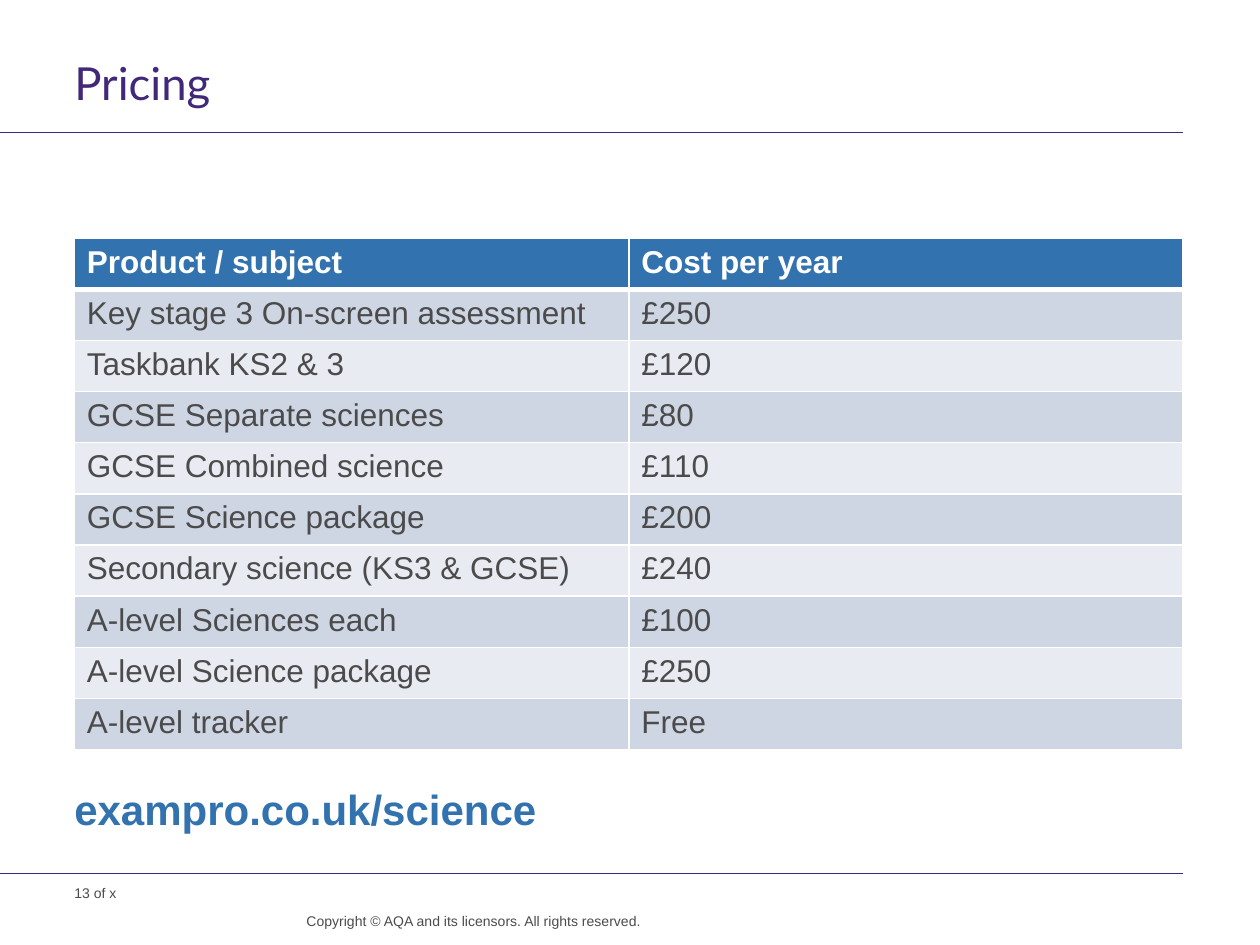
from lxml.etree import SubElement
from pptx import Presentation
from pptx.dml.color import RGBColor
from pptx.enum.shapes import MSO_CONNECTOR
from pptx.enum.text import PP_ALIGN
from pptx.oxml.ns import qn
from pptx.util import Inches, Pt

COLORS = {
    "purple": "412878", "blue": "3273AF", "grey": "4B4B4B",
    "white": "FFFFFF", "dark": "CED5E3", "light": "E8EBF2",
}
STYLES = {
    "title": {"name": "Lato", "size": Pt(26), "color": "purple"},
    "head": {"name": "Arial", "size": Pt(18), "bold": True, "color": "white"},
    "body": {"name": "Arial", "size": Pt(18), "bold": False, "color": "grey"},
    "small": {"name": "Arial", "size": Pt(8), "color": "grey"},
    "link": {"name": "Arial", "size": Pt(24), "bold": True, "color": "blue"},
}
PRICES = [
    ("Product / subject", "Cost per year"),
    ("Key stage 3 On-screen assessment", "£250"),
    ("Taskbank KS2 & 3", "£120"),
    ("GCSE Separate sciences", "£80"),
    ("GCSE Combined science", "£110"),
    ("GCSE Science package", "£200"),
    ("Secondary science (KS3 & GCSE)", "£240"),
    ("A-level Sciences each", "£100"),
    ("A-level Science package", "£250"),
    ("A-level tracker", "Free"),
]
LEFT, RIGHT = 0.59, 9.39


def rgb(name):
    return RGBColor.from_string(COLORS[name])


class Deck:
    """Holds the text styles and the slide being drawn."""

    def __init__(self, slide, styles):
        self.slide = slide
        self.styles = styles

    def label(self, para, text, style):
        """Add a styled run to a paragraph."""
        run = para.add_run()
        run.text = text
        for key, value in self.styles[style].items():
            if key == "color":
                run.font.color.rgb = rgb(value)
            else:
                setattr(run.font, key, value)

    def text(self, text, style, box, **layout):
        frame = self.slide.shapes.add_textbox(*map(Inches, box)).text_frame
        frame.word_wrap = True
        for side in ("left", "top", "right", "bottom"):
            setattr(frame, f"margin_{side}", 0)
        para = frame.paragraphs[0]
        for key, value in layout.items():
            setattr(para, key, value)
        self.label(para, text, style)

    def rule(self, top):
        """Draw a thin line from the slide's left edge to the right margin."""
        ends = map(Inches, (0, top, RIGHT, top))
        line = self.slide.shapes.add_connector(MSO_CONNECTOR.STRAIGHT, *ends)
        line.line.color.rgb = rgb("purple")
        line.line.width = Pt(0.6)
        SubElement(line._element.spPr, qn("a:effectLst"))

    def border(self, cell, widths):
        props = cell._tc.get_or_add_tcPr()
        for side, width in zip("LRTB", widths):
            edge = SubElement(props, qn(f"a:ln{side}"), w=str(Pt(width)))
            fill = SubElement(edge, qn("a:solidFill"))
            SubElement(fill, qn("a:srgbClr"), val=COLORS["white"])

    def table(self, rows, box):
        shape = self.slide.shapes.add_table(
            len(rows), len(rows[0]), *map(Inches, box))
        for i, row in enumerate(rows):
            shade = "blue" if i == 0 else ("light", "dark")[i % 2]
            widths = (1, 1, 3 if i == 1 else 1, 3 if i == 0 else 1)
            for j, text in enumerate(row):
                cell = shape.table.cell(i, j)
                self.border(cell, widths)
                cell.fill.solid()
                cell.fill.fore_color.rgb = rgb(shade)
                self.label(cell.text_frame.paragraphs[0], text,
                           "body" if i else "head")


def main():
    show = Presentation()
    show.slide_width, show.slide_height = Inches(10), Inches(7.5)
    deck = Deck(show.slides.add_slide(show.slide_layouts[6]), STYLES)
    wide = RIGHT - LEFT

    for top in (1.05, 6.93):
        deck.rule(top)
    deck.text("13 of x", "small", (LEFT, 7.02, 1.57, 0.13))
    deck.text("Pricing", "title", (LEFT, 0.48, wide, 0.47),
              line_spacing=Pt(28))
    deck.table(PRICES, (LEFT, 1.89, wide, 4.06))
    deck.text("Copyright © AQA and its licensors. All rights reserved.",
              "small", (2.16, 7.24, 2.93, 0.26),
              alignment=PP_ALIGN.RIGHT, line_spacing=Pt(10))
    deck.text("exampro.co.uk/science", "link", (LEFT, 6.22, 6.24, 0.71))
    show.save("out.pptx")


if __name__ == "__main__":
    main()
